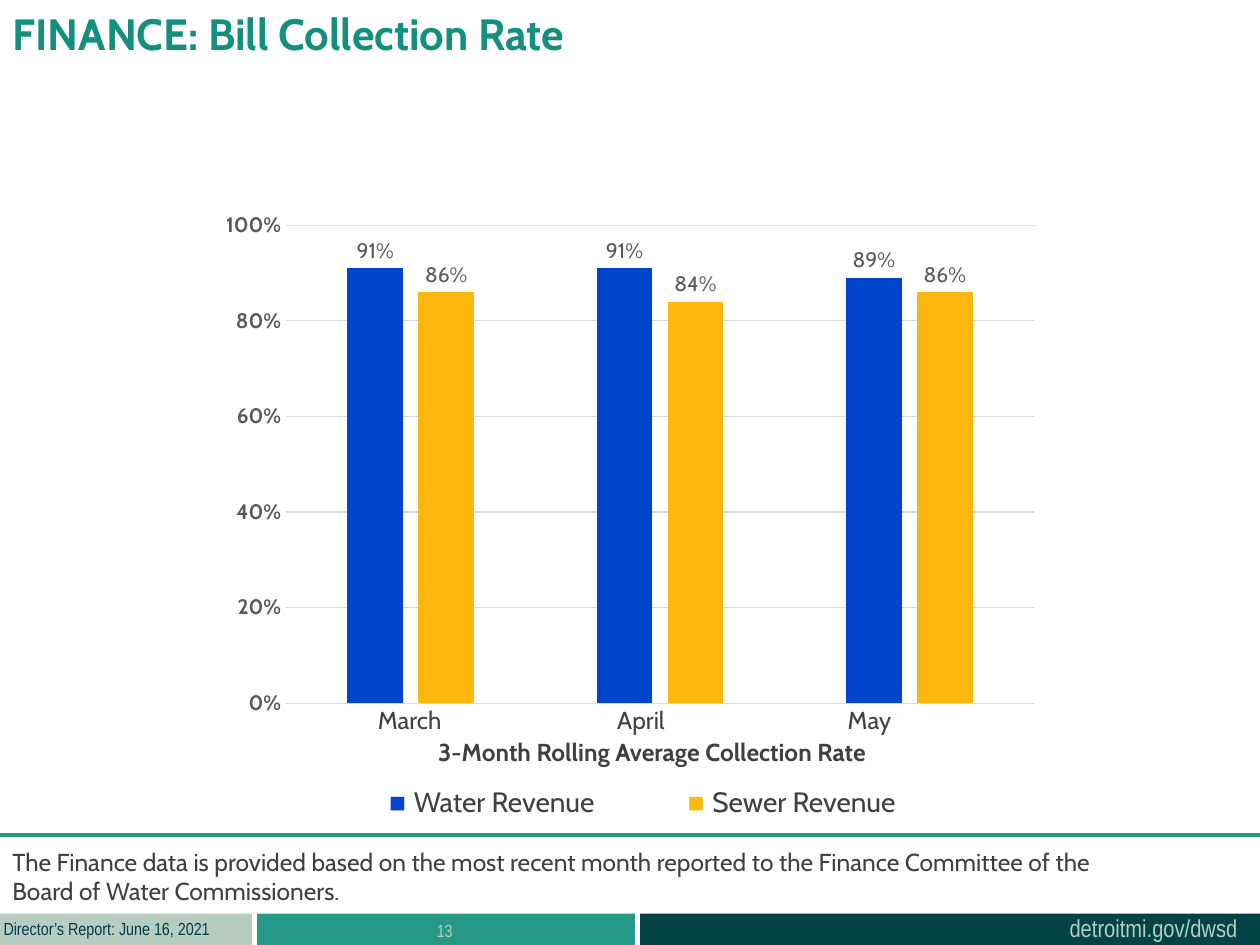
"""Build the bill collection rate slide with its clustered column chart."""
from lxml import etree
from pptx import Presentation, util as u
from pptx.chart.data import CategoryChartData
from pptx.dml.color import RGBColor
from pptx.enum import chart as c, shapes, text
from pptx.oxml import parse_xml
from pptx.oxml.ns import nsdecls, qn

TEAL = RGBColor(0x27, 0x99, 0x89)
TITLE_TEAL = RGBColor(0x13, 0x8F, 0x7E)
DARK_TEAL = RGBColor(0x00, 0x44, 0x45)
SAGE = RGBColor(0xB7, 0xCD, 0xC2)
NAVY = RGBColor(0x00, 0x3B, 0x49)
BLUE = RGBColor(0x00, 0x45, 0xCB)
GOLD = RGBColor(0xFE, 0xB7, 0x0D)
CHARCOAL = RGBColor(0x40, 0x40, 0x40)
GRAY = RGBColor(0x59, 0x59, 0x59)
GRID = RGBColor(0xD9, 0xD9, 0xD9)


def style_font(font, name, size, color, bold=False):
    font.name, font.size, font.bold = name, u.Pt(size), bold
    font.color.rgb = color


def add_text(box, runs, size, tabs=(), bold=False, wrap=False):
    shape = slide.shapes.add_textbox(*map(u.Inches, box))
    shape.text_frame.word_wrap = wrap
    paragraph = shape.text_frame.paragraphs[0]
    if tabs:
        tab_list = etree.SubElement(paragraph._p.get_or_add_pPr(), qn("a:tabLst"))
        for position in tabs:
            etree.SubElement(tab_list, qn("a:tab"), pos=str(u.Inches(position)), algn="l")
    for index, (content, font_name, color) in enumerate(runs):
        for line_index, line in enumerate(content.split("\n")):
            if line_index:
                paragraph.add_line_break()
            run = paragraph.add_run()
            run.text = line
            style_font(run.font, font_name, size, color, bold)
    return paragraph


presentation = Presentation()
presentation.slide_width, presentation.slide_height = u.Inches(10), u.Inches(7.5)
slide = presentation.slides.add_slide(presentation.slide_layouts[5])

for left, width, color in ((2.04, 3, TEAL), (5.08, 4.92, DARK_TEAL), (0, 2, SAGE)):
    bar = slide.shapes.add_shape(
        shapes.MSO_SHAPE.RECTANGLE, u.Inches(left), u.Inches(7.25), u.Inches(width), u.Inches(0.25))
    bar.shadow.inherit = False
    bar.fill.solid()
    bar.fill.fore_color.rgb = color
    bar.line.fill.background()

add_text((8.39, 7.2, 1.55, 0.34), [("detroitmi.gov/dwsd", "Arial Narrow", SAGE)], 14)
add_text((-0.07, 7.24, 1.84, 0.27), [("Director’s Report: June 16, 2021", "Arial Narrow", NAVY)], 10)
page_number = add_text((2.03, 7.25, 3, 0.25), [("13", "Arial Narrow", SAGE)], 10, wrap=True)
page_number.alignment = text.PP_ALIGN.CENTER

title = slide.shapes.title
title.left, title.top, title.width, title.height = map(u.Inches, (0, 0, 7.59, 0.77))
title.text_frame.text = "FINANCE: Bill Collection Rate"
title.text_frame.vertical_anchor = text.MSO_ANCHOR.TOP
title.text_frame.paragraphs[0].alignment = text.PP_ALIGN.LEFT
style_font(title.text_frame.paragraphs[0].runs[0].font, "Cabin", 25, TITLE_TEAL, True)

chart_data = CategoryChartData(number_format="0%")
chart_data.categories = ["1", "2", "3"]
chart_data.add_series("Water", (0.91, 0.91, 0.89))
chart_data.add_series("Sewer", (0.86, 0.84, 0.86))
chart = slide.shapes.add_chart(
    c.XL_CHART_TYPE.COLUMN_CLUSTERED, u.Inches(1.67), u.Inches(1.32),
    u.Inches(6.67), u.Inches(4.44), chart_data).chart
chart.has_legend = False
chart.has_title = False
style_font(chart.font, "Cabin", 12, GRAY)

plot = chart.plots[0]
plot.gap_width, plot.overlap = 219, -27
plot.vary_by_categories = False
for series, color in zip(plot.series, (BLUE, GOLD)):
    series.format.fill.solid()
    series.format.fill.fore_color.rgb = color
    series.invert_if_negative = False
    labels = series.data_labels
    labels.show_value = True
    labels.number_format, labels.number_format_is_linked = "0%", False
    labels.position = c.XL_LABEL_POSITION.OUTSIDE_END
    style_font(labels.font, "Cabin", 12, GRAY)

chart.category_axis.visible = False
value_axis = chart.value_axis
value_axis.minimum_scale, value_axis.maximum_scale, value_axis.major_unit = 0, 1.1, 0.2
value_axis.major_tick_mark = c.XL_TICK_MARK.NONE
value_axis.format.line.fill.background()
value_axis.major_gridlines.format.line.color.rgb = GRID
value_axis.major_gridlines.format.line.width = u.Pt(0.75)
value_axis.tick_labels.number_format = "0%"
value_axis.tick_labels.number_format_is_linked = False
style_font(value_axis.tick_labels.font, "Cabin", 12, GRAY, True)

plot_area = chart._chartSpace.chart.plotArea
for old_layout in plot_area.findall(qn("c:layout")):
    plot_area.remove(old_layout)
plot_area.insert(0, parse_xml(
    f'<c:layout {nsdecls("c")}><c:manualLayout><c:layoutTarget val="inner"/>'
    '<c:xMode val="edge"/><c:yMode val="edge"/><c:x val="0.09"/><c:y val="0.02"/>'
    '<c:w val="0.89"/><c:h val="0.94"/></c:manualLayout></c:layout>'))

divider = slide.shapes.add_connector(
    shapes.MSO_CONNECTOR.STRAIGHT, u.Inches(10), u.Inches(6.63), u.Inches(0), u.Inches(6.63))
divider.line.color.rgb = TEAL
divider.line.width = u.Pt(2.25)
etree.SubElement(divider._element.spPr, qn("a:effectLst"))

add_text((3.38, 5.8, 3.6, 0.34),
         [("3-Month Rolling Average Collection Rate", "Cabin", CHARCOAL)], 14, bold=True)
add_text((0, 6.67, 10, 0.57),
         [("The Finance data is provided based on the most recent month reported to the "
           "Finance Committee of the\nBoard of Water Commissioners.", "Cabin", CHARCOAL)], 14, wrap=True)
add_text((2.99, 6.18, 4.37, 0.37),
         [("■ ", "Arial", BLUE), ("Water Revenue\t", "Cabin", CHARCOAL),
          ("■ ", "Arial", GOLD), ("Sewer Revenue", "Cabin", CHARCOAL)], 16, tabs=(2.37,))
add_text((2.9, 5.55, 4.67, 0.34),
         [("March\tApril\tMay", "Cabin", CHARCOAL)], 14, tabs=(1.9, 3.73))

presentation.save("out.pptx")
